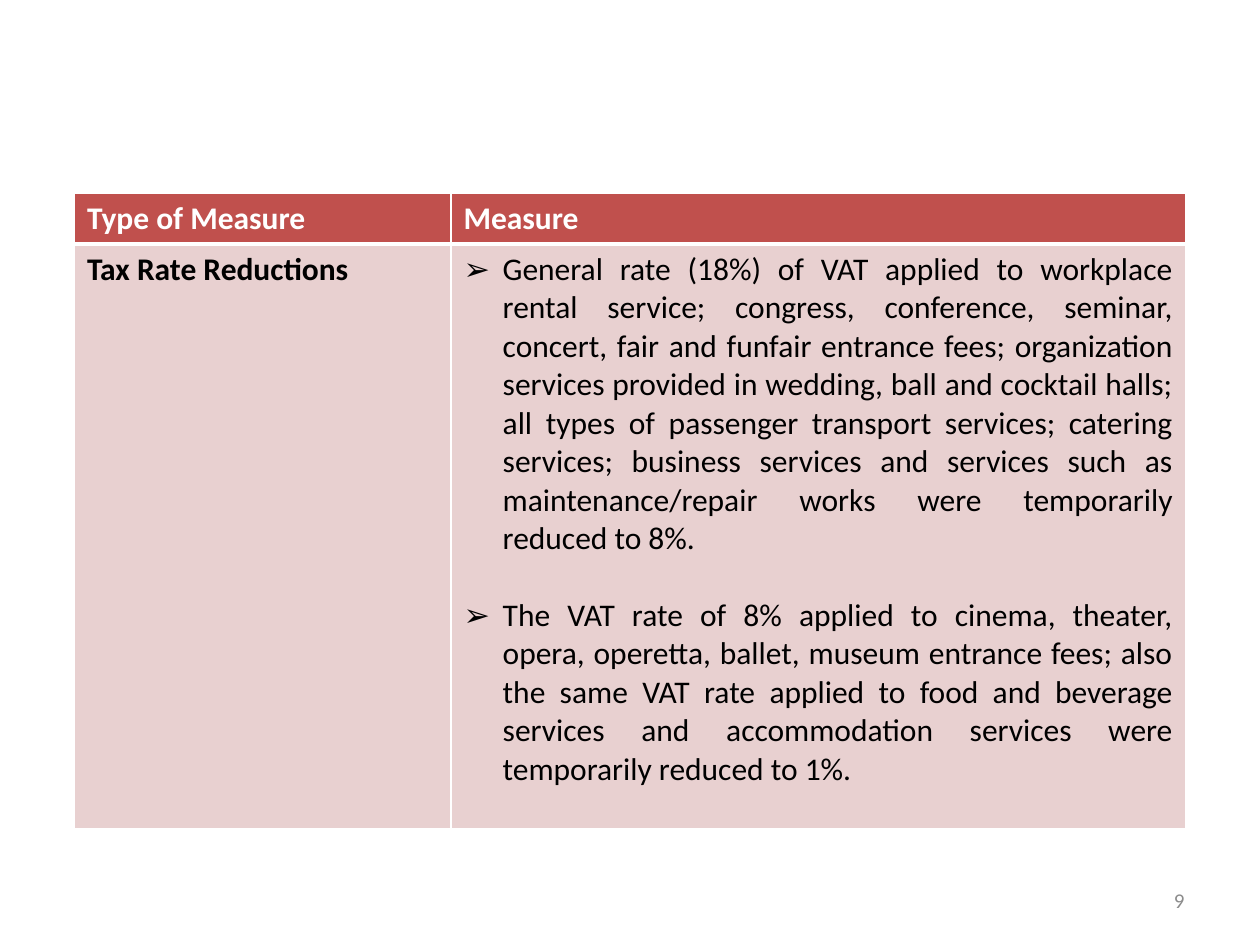
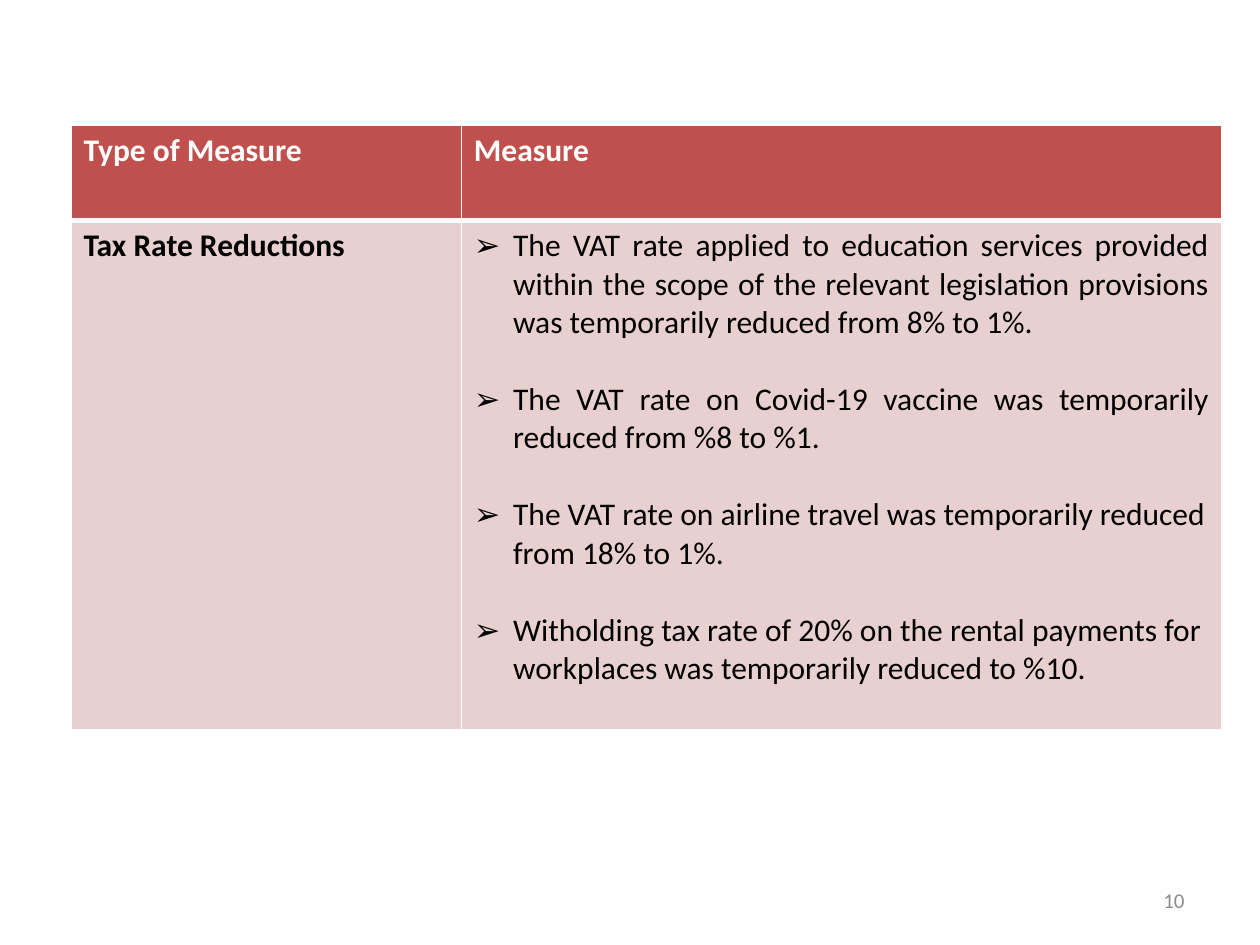
from lxml import etree
from pptx import Presentation
from pptx import util as u
from pptx.dml.color import RGBColor
from pptx.enum import text
from pptx.oxml import ns

COLORS = {"header": "C0504D", "body": "E8D0D0", "white": "FFFFFF",
          "black": "000000", "number": "8C8C8C"}
FONT = "Calibri"
HEADINGS = ("Type of Measure", "Measure")
LEFT, JUSTIFY, RIGHT = (text.PP_ALIGN.LEFT, text.PP_ALIGN.JUSTIFY,
                        text.PP_ALIGN.RIGHT)


def add_element(parent, tag, **attributes):
    return etree.SubElement(parent, ns.qn(tag), attributes)


def write(frame, content, size=18, color="black", bold=False, align=LEFT,
          bullet=None, gap=0):
    """Add one paragraph; the first call fills the frame's own paragraph."""
    first = not frame.text
    para = frame.paragraphs[0] if first else frame.add_paragraph()
    para.alignment = align
    if gap and not first:
        para.space_before = u.Pt(gap)
    if bullet:
        properties = para._p.get_or_add_pPr()
        indent = u.Cm(0.79)
        properties.set("marL", str(indent))
        properties.set("indent", str(-indent))
        add_element(properties, "a:buFont", typeface="Wingdings 2" if bullet == "•" else "Arial")
        add_element(properties, "a:buChar", char=bullet)
    span = para.add_run()
    span.text = content
    span.font.name = FONT
    span.font.size = u.Pt(size)
    span.font.bold = bold
    span.font.color.rgb = RGBColor.from_string(COLORS[color])


class MeasureDeck:
    def __init__(self):
        self.deck = Presentation()
        self.deck.slide_width, self.deck.slide_height = u.Cm(25.4), u.Cm(19.05)
        self.page = None

    def add_page(self, number):
        self.page = self.deck.slides.add_slide(self.deck.slide_layouts[6])
        box = self.page.shapes.add_textbox(u.Cm(18.2), u.Cm(17.65),
                                           u.Cm(5.93), u.Cm(1.01))
        frame = box.text_frame
        frame.word_wrap = True
        frame.vertical_anchor = text.MSO_ANCHOR.MIDDLE
        write(frame, str(number), size=12, color="number", align=RIGHT)

    def style_cell(self, cell, fill, bottom=1):
        properties = cell._tc.get_or_add_tcPr()
        for side, width in zip("LRTB", (1, 1, 1, bottom)):
            line = add_element(properties, f"a:ln{side}", w=str(u.Pt(width)))
            solid = add_element(line, "a:solidFill")
            add_element(solid, "a:srgbClr", val=COLORS["white"])
        cell.fill.solid()
        cell.fill.fore_color.rgb = RGBColor.from_string(COLORS[fill])

    def add_measures(self, left, top, widths, heights, kind, measures):
        table = self.page.shapes.add_table(
            2, 2, u.Cm(left), u.Cm(top),
            u.Cm(sum(widths)), u.Cm(sum(heights))).table
        table.horz_banding = False
        for column, width in zip(table.columns, widths):
            column.width = u.Cm(width)
        for row, height in zip(table.rows, heights):
            row.height = u.Cm(height)

        # Header row
        for index, heading in enumerate(HEADINGS):
            cell = table.cell(0, index)
            self.style_cell(cell, "header", bottom=3)
            write(cell.text_frame, heading, color="white", bold=True)

        # Body row
        kind_cell, list_cell = table.cell(1, 0), table.cell(1, 1)
        for cell in (kind_cell, list_cell):
            self.style_cell(cell, "body")
        write(kind_cell.text_frame, kind, bold=True)
        for measure, align in measures:
            write(list_cell.text_frame, measure, align=align, bullet="➢", gap=22)


def main():
    show = MeasureDeck()

    # VAT on services and entrance fees
    show.add_page(9)
    show.add_measures(1.5, 3.89, (7.59, 14.81), (1.03, 11.78),
                      "Tax Rate Reductions", [
        ("General rate (18%) of VAT applied to workplace rental service; "
         "congress, conference, seminar, concert, fair and funfair entrance "
         "fees; organization services provided in wedding, ball and cocktail "
         "halls; all types of passenger transport services; catering services; "
         "business services and services such as maintenance/repair works were "
         "temporarily reduced to 8%.", JUSTIFY),
        ("The VAT rate of 8% applied to cinema, theater, opera, operetta, "
         "ballet, museum entrance fees; also the same VAT rate applied to food "
         "and beverage services and accommodation services were temporarily "
         "reduced to 1%.", JUSTIFY),
    ])

    # Education, vaccine, travel and rent
    show.add_page(10)
    show.add_measures(1.43, 2.52, (7.87, 15.33), (1.92, 10.28),
                      "Tax Rate Reductions", [
        ("The VAT rate applied to education services provided within the scope "
         "of the relevant legislation provisions was temporarily reduced from "
         "8% to 1%.", JUSTIFY),
        ("The VAT rate on Covid-19 vaccine was temporarily reduced from %8 to "
         "%1.", JUSTIFY),
        ("The VAT rate on airline travel was temporarily reduced from 18% to "
         "1%.", LEFT),
        ("Witholding tax rate of 20% on the rental payments for workplaces was "
         "temporarily reduced to %10.", LEFT),
    ])

    show.deck.save("out.pptx")


if __name__ == "__main__":
    main()
